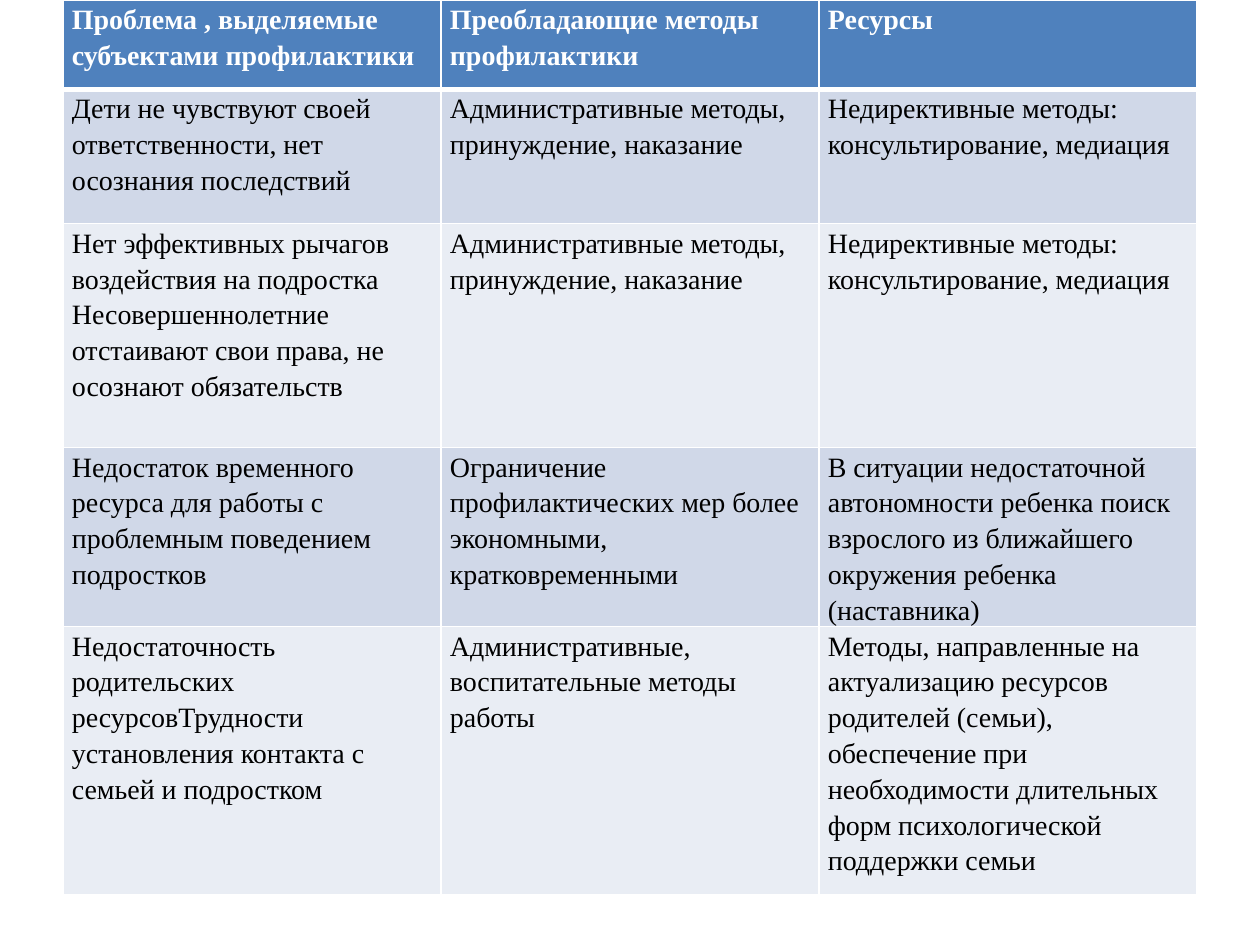
from dataclasses import dataclass

from lxml.etree import SubElement
from pptx import Presentation
from pptx.dml.color import RGBColor
from pptx.oxml import parse_xml
from pptx.oxml.ns import nsdecls, qn
from pptx.table import Table, _Cell
from pptx.util import Cm, Pt

COLORS = {
    "header": "4F81BD",
    "odd": "D0D8E8",
    "even": "E9EDF4",
    "white": "FFFFFF",
    "black": "000000",
}
FONT = {"name": "Times New Roman", "size": Pt(16)}
MARGINS = {
    "margin_left": Cm(0.18),
    "margin_right": Cm(0.18),
    "margin_top": 0,
    "margin_bottom": 0,
}
COLUMN_WIDTH = 7.62


@dataclass(frozen=True)
class Row:
    height: float
    texts: tuple[str, str, str]


ADMINISTRATIVE = "Административные методы, принуждение, наказание"
NON_DIRECTIVE = "Недирективные методы: консультирование, медиация"

ROWS = [
    Row(1.8, (
        "Проблема , выделяемые субъектами профилактики",
        "Преобладающие методы профилактики",
        "Ресурсы",
    )),
    Row(2.71, (
        "Дети не чувствуют своей ответственности, нет осознания последствий",
        ADMINISTRATIVE,
        NON_DIRECTIVE,
    )),
    Row(4.51, (
        "Нет эффективных рычагов воздействия на подростка\n"
        "Несовершеннолетние отстаивают свои права, не осознают обязательств",
        ADMINISTRATIVE,
        NON_DIRECTIVE,
    )),
    Row(3.61, (
        "Недостаток временного ресурса для работы с проблемным поведением подростков",
        "Ограничение профилактических мер более экономными, кратковременными",
        "В ситуации недостаточной автономности ребенка поиск взрослого "
        "из ближайшего окружения ребенка (наставника)",
    )),
    Row(5.41, (
        "Недостаточность родительских ресурсовТрудности установления контакта "
        "с семьей и подростком",
        "Административные, воспитательные методы работы",
        "Методы, направленные на актуализацию ресурсов родителей (семьи), "
        "обеспечение при необходимости длительных форм психологической поддержки семьи",
    )),
]


def set_format(target: object, values: dict) -> None:
    for name, value in values.items():
        setattr(target, name, value)


def set_borders(cell: _Cell, widths: dict[str, int]) -> None:
    tcPr = cell._tc.get_or_add_tcPr()
    for i, (side, width) in enumerate(widths.items()):
        ln = parse_xml(f'<a:ln{side} {nsdecls("a")} w="{Pt(width)}"/>')
        fill = SubElement(ln, qn("a:solidFill"))
        SubElement(fill, qn("a:srgbClr"), val=COLORS["white"])
        tcPr.insert(i, ln)


def fill_cell(cell: _Cell, text: str, row: int) -> None:
    header = row == 0
    band = "header" if header else "odd" if row % 2 else "even"
    cell.fill.solid()
    cell.fill.fore_color.rgb = RGBColor.from_string(COLORS[band])
    set_format(cell, MARGINS)
    set_borders(cell, {"L": 1, "R": 1, "T": 3 if row == 1 else 1, "B": 3 if header else 1})
    tf = cell.text_frame
    tf.text = text
    spacing = {"line_spacing": 1.15, "space_after": Pt(0 if "\n" in text else 10)}
    for p in tf.paragraphs:
        set_format(p, spacing)
        for r in p.runs:
            set_format(r.font, FONT | {"bold": header})
            r.font.color.rgb = RGBColor.from_string(COLORS["white" if header else "black"])


def fill_table(table: Table, rows: list[Row]) -> None:
    for i, row in enumerate(rows):
        table.rows[i].height = Cm(row.height)
        for j, text in enumerate(row.texts):
            fill_cell(table.cell(i, j), text, i)


def main() -> None:
    """Build the slide with the table of prevention problems, methods and resources."""
    prs = Presentation()
    prs.slide_width, prs.slide_height = Cm(25.4), Cm(19.05)
    s = prs.slides.add_slide(prs.slide_layouts[6])
    columns = len(ROWS[0].texts)
    sp = s.shapes.add_table(
        len(ROWS), columns, Cm(1.27), 0,
        Cm(COLUMN_WIDTH * columns), Cm(sum(row.height for row in ROWS)),
    )
    fill_table(sp.table, ROWS)
    prs.save("out.pptx")


if __name__ == "__main__":
    main()
